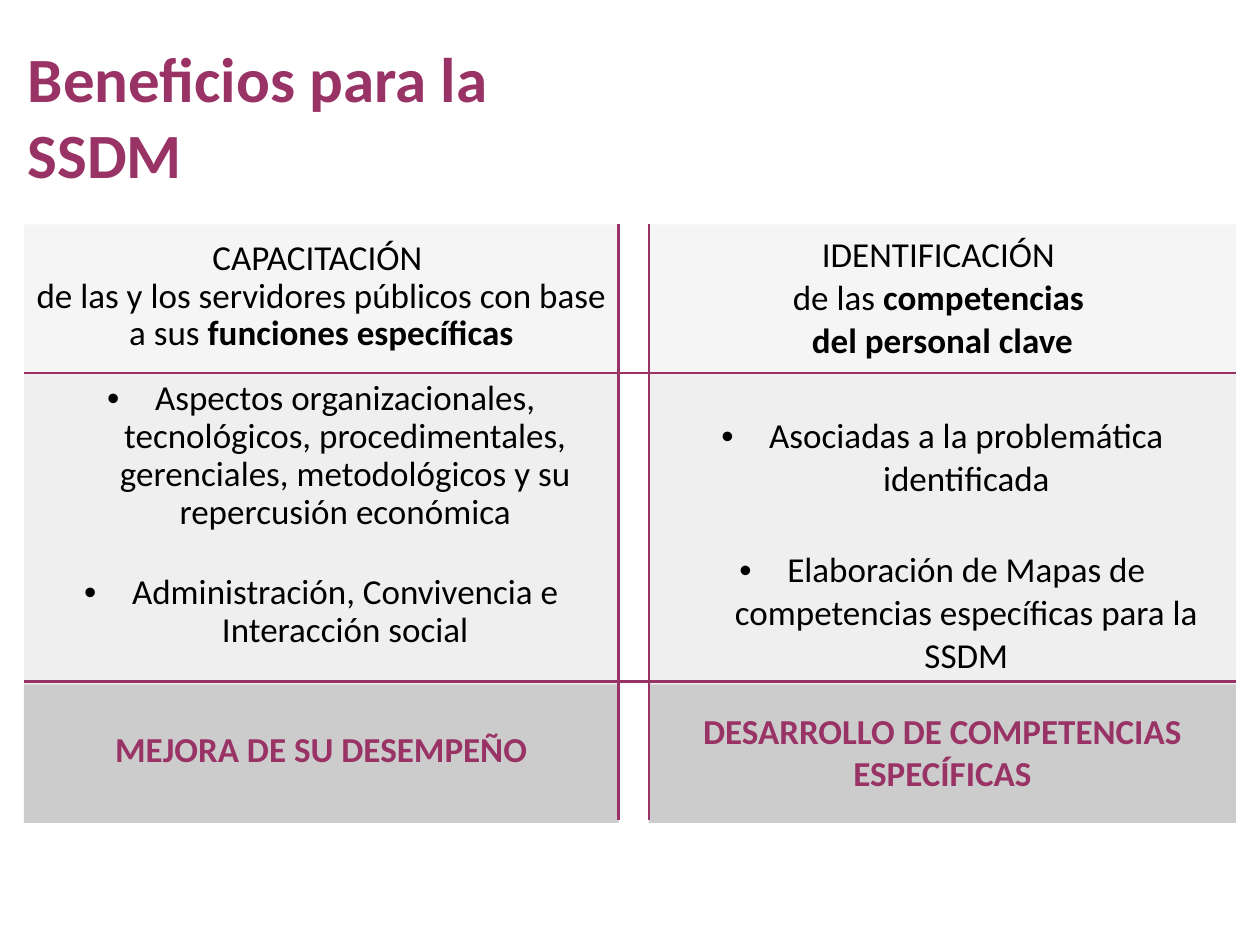
from dataclasses import dataclass
from itertools import accumulate

from lxml.etree import SubElement
from pptx import Presentation
from pptx.dml.color import RGBColor
from pptx.enum.shapes import MSO_CONNECTOR
from pptx.enum.text import MSO_ANCHOR, MSO_AUTO_SIZE, PP_ALIGN
from pptx.oxml.ns import qn
from pptx.util import Inches, Pt


@dataclass(frozen=True)
class Theme:
    font: str = "Calibri"
    accent: str = "993366"
    text: str = "000000"
    title_size: float = 36
    body_size: float = 20
    tight_spacing: float = 21.6
    line_width: float = 1.5
    bullet_indent: float = 0.38


@dataclass(frozen=True)
class Band:
    """Height, fill and text style of one table row."""
    height: float
    fill: str
    opacity: int
    bullet: bool = False
    emphasis: bool = False


@dataclass(frozen=True)
class Run:
    text: str
    bold: bool = False


@dataclass(frozen=True)
class Benefit:
    """One text column: a list of paragraphs for each row."""
    column: int
    tight: bool
    cells: tuple


THEME = Theme()
TABLE_LEFT, TABLE_TOP = 0.19, 1.78
COLUMN_WIDTHS = (4.72, 0.24, 4.66)
BANDS = (
    Band(1.18, "F2F2F2", 70),
    Band(1.35, "D9D9D9", 40, bullet=True),
    Band(1.10, "D9D9D9", 40, bullet=True),
    Band(1.10, "808080", 40, emphasis=True),
)
BENEFITS = (
    Benefit(0, True, (
        [[Run("CAPACITACIÓN ")],
         [Run("de las y los servidores públicos con base a sus "),
          Run("funciones específicas", True)]],
        [[Run("Aspectos organizacionales, tecnológicos, procedimentales, "
              "gerenciales, metodológicos y su repercusión económica")]],
        [[Run("Administración, Convivencia e Interacción social")]],
        [[Run("MEJORA DE SU DESEMPEÑO")]],
    )),
    Benefit(2, False, (
        [[Run("IDENTIFICACIÓN ")],
         [Run("de las "), Run("competencias ", True)],
         [Run("del personal clave", True)]],
        [[Run("Asociadas a la problemática identificada")]],
        [[Run("Elaboración de Mapas de competencias específicas para la SSDM")]],
        [[Run("DESARROLLO DE COMPETENCIAS ESPECÍFICAS")]],
    )),
)
COLUMN_EDGES = list(accumulate(COLUMN_WIDTHS, initial=TABLE_LEFT))
ROW_EDGES = list(accumulate((band.height for band in BANDS), initial=TABLE_TOP))


def apply_format(target, values: dict) -> None:
    for name, value in values.items():
        setattr(target, name, value)


def add_run(paragraph, text: str, size: float, color: str, bold: bool) -> None:
    run = paragraph.add_run()
    run.text = text
    apply_format(run.font, {"name": THEME.font, "size": Pt(size), "bold": bold})
    run.font.color.rgb = RGBColor.from_string(color)


def add_bullet(paragraph) -> None:
    properties = paragraph._p.get_or_add_pPr()
    indent = Inches(THEME.bullet_indent)
    properties.set("marL", str(indent))
    properties.set("indent", str(-indent))
    SubElement(properties, qn("a:buFont")).set("typeface", "Arial")
    SubElement(properties, qn("a:buChar")).set("char", "•")


def fill_cell(cell, band: Band, paragraphs: list, tight: bool) -> None:
    cell.fill.solid()
    cell.fill.fore_color.rgb = RGBColor.from_string(band.fill)
    color = cell._tc.tcPr.find(".//" + qn("a:srgbClr"))
    SubElement(color, qn("a:alpha")).set("val", str(band.opacity * 1000))
    cell.vertical_anchor = MSO_ANCHOR.MIDDLE
    for index, runs in enumerate(paragraphs):
        frame = cell.text_frame
        paragraph = frame.add_paragraph() if index else frame.paragraphs[0]
        if band.bullet:
            add_bullet(paragraph)
        paragraph.alignment = PP_ALIGN.CENTER
        if tight:
            paragraph.line_spacing = Pt(THEME.tight_spacing)
        for run in runs:
            add_run(paragraph, run.text, THEME.body_size,
                    THEME.accent if band.emphasis else THEME.text,
                    run.bold or band.emphasis)


def add_benefits_table(slide) -> None:
    table = slide.shapes.add_table(
        len(BANDS), len(COLUMN_WIDTHS), Inches(TABLE_LEFT), Inches(TABLE_TOP),
        Inches(sum(COLUMN_WIDTHS)), Inches(ROW_EDGES[-1] - TABLE_TOP)).table
    apply_format(table, {"first_row": False, "horz_banding": False})
    no_style = "{2D5ABB26-0587-4C30-8999-92F81FD0307C}"
    table._tbl.tblPr.find(qn("a:tableStyleId")).text = no_style
    for column, width in zip(table.columns, COLUMN_WIDTHS):
        column.width = Inches(width)
    for row, band in zip(table.rows, BANDS):
        row.height = Inches(band.height)
    for cell in table.iter_cells():
        cell.fill.background()
    for benefit in BENEFITS:
        for row, (band, paragraphs) in enumerate(zip(BANDS, benefit.cells)):
            fill_cell(table.cell(row, benefit.column), band, paragraphs,
                      benefit.tight)


def add_rule(slide, left: float, top: float, right: float, bottom: float) -> None:
    connector = slide.shapes.add_connector(
        MSO_CONNECTOR.STRAIGHT, *map(Inches, (left, top, right, bottom)))
    connector.line.color.rgb = RGBColor.from_string(THEME.accent)
    connector.line.width = Pt(THEME.line_width)
    SubElement(connector._element.spPr, qn("a:effectLst"))


def format_title(title) -> None:
    apply_format(title, {"left": Inches(0.12), "top": Inches(0.29),
                         "width": Inches(5.12), "height": Inches(1.25)})
    apply_format(title.text_frame, {"word_wrap": True,
                                    "auto_size": MSO_AUTO_SIZE.NONE,
                                    "vertical_anchor": MSO_ANCHOR.MIDDLE})
    paragraph = title.text_frame.paragraphs[0]
    paragraph.alignment = PP_ALIGN.LEFT
    add_run(paragraph, "Beneficios para la SSDM", THEME.title_size,
            THEME.accent, True)


def main() -> None:
    presentation = Presentation()
    apply_format(presentation, {"slide_width": Inches(10),
                                "slide_height": Inches(7.5)})
    slide = presentation.slides.add_slide(presentation.slide_layouts[5])
    format_title(slide.shapes.title)
    add_benefits_table(slide)
    for edge in (ROW_EDGES[1], ROW_EDGES[3]):
        add_rule(slide, COLUMN_EDGES[0], edge, COLUMN_EDGES[-1], edge)
    for edge in COLUMN_EDGES[1:3]:
        add_rule(slide, edge, ROW_EDGES[0], edge, ROW_EDGES[-1])
    presentation.save("out.pptx")


if __name__ == "__main__":
    main()
